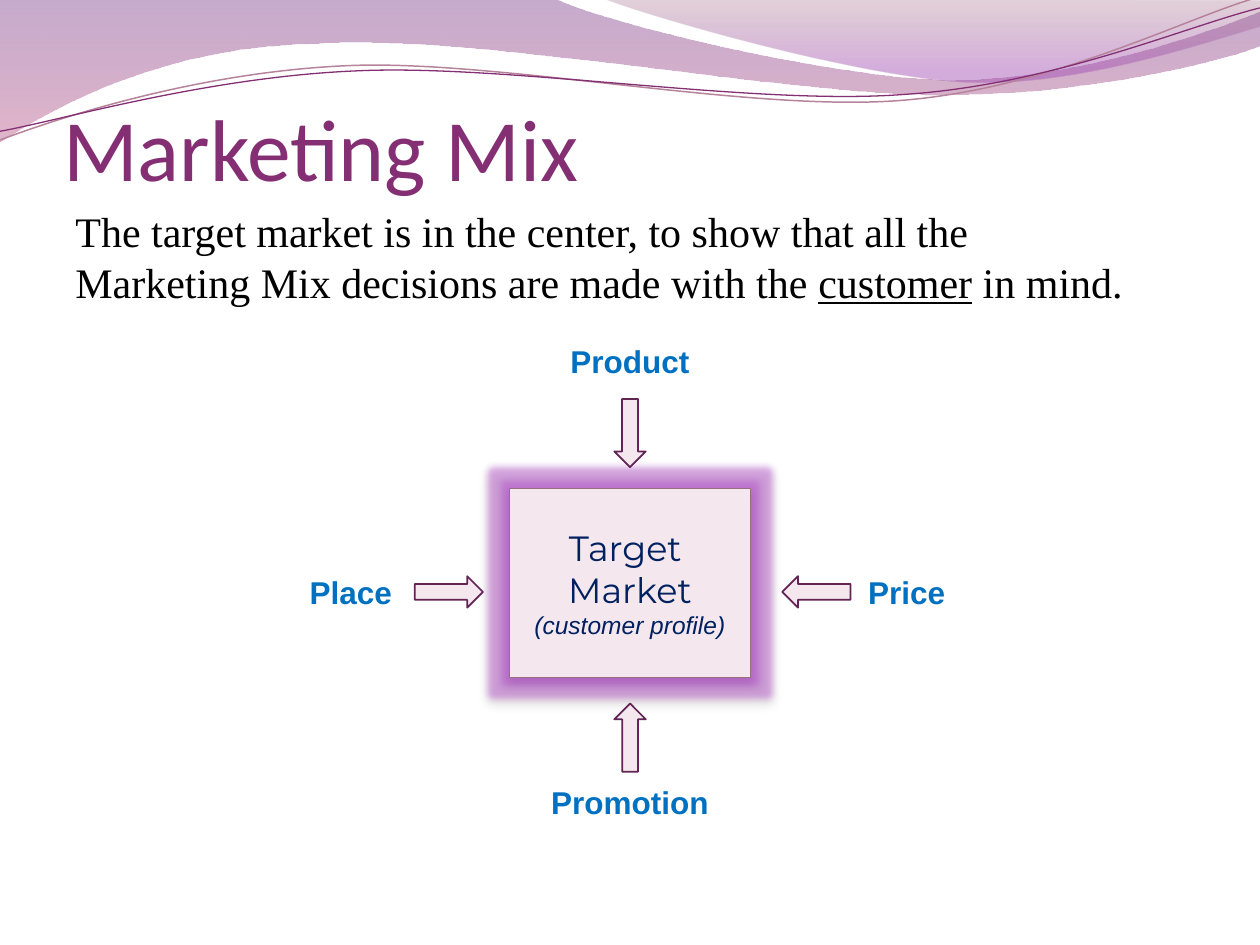
from lxml.etree import SubElement
from pptx import Presentation
from pptx.dml.color import RGBColor
from pptx.enum.shapes import MSO_SHAPE
from pptx.enum.text import MSO_ANCHOR, PP_ALIGN
from pptx.oxml.ns import qn
from pptx.util import Pt

PLUM, BLUSH, NAVY, BLUE = "842F73", "F4E7ED", "002060", "0070C0"

# Each wave: start point, then segments of one point (line) or three (Bézier).
BROAD_WAVE = [(0, 0), [(317, -1)],
              [(343, 12), (478, 45.5), (546, 45.5)],
              [(614, 45.5), (690, 18.5), (720, 6.5)], [(720.5, 26)],
              [(708, 31.5), (626.5, 54.5), (537, 54)],
              [(448, 54), (275, 20), (185, 24.5)],
              [(93, 26), (33, 60), (-1, 81.5)]]
RIGHT_WAVE = [(345, -1),
              [(366.5, 8), (491, 44.5), (553.5, 47)],
              [(616.5, 49.5), (692, 23), (720, 15)], [(720, 0)]]
PALE_LINE = [(0, 80),
             [(34.5, 67), (114, 41), (199.5, 37.5)],
             [(284.5, 34), (427, 64), (513.5, 57.5)],
             [(600, 51), (675.5, 11), (718.5, -1.5)]]
DARK_LINE = [(0, 75),
             [(34, 69), (118, 44), (204, 40.5)],
             [(290, 36.5), (430, 60.5), (516, 54)],
             [(602, 48.5), (677.5, 15), (720, 4.5)]]


def rgb(color):
    return RGBColor.from_string(color)


def format_run(run, font, size, color, bold=False, italic=False):
    run.font.name, run.font.size = font, Pt(size)
    run.font.bold, run.font.italic = bold, italic
    run.font.color.rgb = rgb(color)


def format_shape(shape, fill, line, width):
    shape.shadow.inherit = False
    shape.fill.solid()
    shape.fill.fore_color.rgb = rgb(fill)
    shape.line.color.rgb = rgb(line)
    shape.line.width = Pt(width)


def add_outline(slide, outline, close):
    """Build a freeform through all points, then bend each three-point segment."""
    start, *segments = outline
    builder = slide.shapes.build_freeform(Pt(start[0]), Pt(start[1]))
    builder.add_line_segments([(Pt(x), Pt(y)) for segment in segments
                               for x, y in segment], close=close)
    shape = builder.convert_to_shape()
    shape.shadow.inherit = False
    straight = iter(list(shape.element.iter(qn("a:lnTo"))))
    for segment in segments:
        first, *others = [next(straight) for _ in segment]
        if others:
            first.tag = qn("a:cubicBezTo")
            for other in others:
                first.append(other[0])
                other.getparent().remove(other)
    return shape


def add_wave(slide, outline, stops):
    """Add a wave with a top-to-bottom gradient of (position, color, opacity %)."""
    wave = add_outline(slide, outline, True)
    wave.line.fill.background()
    wave.fill.gradient()
    wave.fill.gradient_angle = 270
    for stop, (position, color, _) in zip(wave.fill.gradient_stops, stops):
        stop.position = position
        stop.color.rgb = rgb(color)
    colors = wave.element.spPr.find(qn("a:gradFill")).iter(qn("a:srgbClr"))
    for node, (_, _, opacity) in zip(colors, stops):
        SubElement(node, qn("a:alpha"), val=str(opacity * 1000))


def add_wave_line(slide, outline, color, width):
    curve = add_outline(slide, outline, False)
    curve.fill.background()
    curve.line.color.rgb = rgb(color)
    curve.line.width = Pt(width)


def add_effect(shape, kind, color, opacity, **settings):
    effects = shape.element.spPr.find(qn("a:effectLst"))
    effect = SubElement(effects, qn(kind), **settings)
    node = SubElement(effect, qn("a:srgbClr"), val=color)
    SubElement(node, qn("a:alpha"), val=str(opacity * 1000))


def set_title(slide):
    title = slide.shapes.title
    title.left, title.top, title.width, title.height = Pt(36), Pt(24), Pt(648), Pt(90)
    frame = title.text_frame
    frame.text = "Marketing Mix"
    frame.vertical_anchor = MSO_ANCHOR.BOTTOM
    frame.margin_left = frame.margin_right = frame.margin_bottom = 0
    frame.margin_top = Pt(3.6)
    frame.paragraphs[0].alignment = PP_ALIGN.LEFT
    format_run(frame.paragraphs[0].runs[0], "Calibri", 50, PLUM)
    title.element.getparent().append(title.element)  # in front of the waves


def add_text_box(slide, left, top, width, height):
    frame = slide.shapes.add_textbox(Pt(left), Pt(top), Pt(width), Pt(height)).text_frame
    frame.word_wrap = True
    return frame


def add_explanation(slide):
    paragraph = add_text_box(slide, 36, 114, 630, 78).paragraphs[0]
    paragraph.space_before = Pt(2.5)
    for text in ("The target market is in the center, to show that all the "
                 "Marketing Mix decisions are made with the ", "customer", " in mind."):
        run = paragraph.add_run()
        run.text = text
        format_run(run, "Times New Roman", 24, "000000")
        run.font.underline = text == "customer"


def add_target_market(slide):
    target = slide.shapes.add_shape(MSO_SHAPE.RECTANGLE, Pt(291), Pt(279), Pt(138), Pt(108))
    format_shape(target, BLUSH, "996E81", 0.75)
    add_effect(target, "a:glow", "B44FCC", 45, rad=str(Pt(8)))
    add_effect(target, "a:outerShdw", "49343D", 48, blurRad=str(Pt(4.5)),
               dist=str(Pt(3)), dir="5400000", rotWithShape="0")
    frame = target.text_frame
    frame.word_wrap = True
    frame.vertical_anchor = MSO_ANCHOR.MIDDLE
    frame.text = "Target \nMarket\v(customer profile)"
    for paragraph in frame.paragraphs:
        paragraph.alignment = PP_ALIGN.CENTER
        for run in paragraph.runs:
            format_run(run, "Montserrat", 20, NAVY)
    format_run(frame.paragraphs[1].runs[1], "Arial", 14, NAVY, italic=True)


def add_label(slide, text, left, top, width, alignment):
    frame = add_text_box(slide, left, top, width, 29)
    frame.text = text
    frame.paragraphs[0].alignment = alignment
    format_run(frame.paragraphs[0].runs[0], "Arial", 18, BLUE, bold=True)


def add_arrow(slide, center_x, center_y, rotation, width=18, length=39):
    arrow = slide.shapes.add_shape(MSO_SHAPE.DOWN_ARROW, Pt(center_x - width / 2),
                                   Pt(center_y - length / 2), Pt(width), Pt(length))
    arrow.rotation = rotation
    format_shape(arrow, BLUSH, "622355", 1)


def main():
    prs = Presentation()
    prs.slide_width, prs.slide_height = Pt(720), Pt(540)
    slide = prs.slides.add_slide(prs.slide_layouts[5])

    add_wave(slide, BROAD_WAVE, [(0, "834591", 45), (1, "C9799E", 55)])
    add_wave(slide, RIGHT_WAVE, [(0, "9F6881", 30), (0.8, "A14BB4", 45)])
    add_wave_line(slide, PALE_LINE, "B6839A", 0.85)
    add_wave_line(slide, DARK_LINE, PLUM, 0.75)

    set_title(slide)
    add_explanation(slide)
    add_target_market(slide)

    for text, left, top, width, alignment, arrow_x, arrow_y, rotation in (
            ("Product", 318, 192, 84, PP_ALIGN.CENTER, 360, 247.5, 0),
            ("Promotion", 304.5, 444, 111, PP_ALIGN.CENTER, 360, 421.5, 180),
            ("Place", 147, 324, 84, PP_ALIGN.RIGHT, 256.5, 338.25, 270),
            ("Price", 489, 324, 84, PP_ALIGN.LEFT, 466.5, 338.25, 90)):
        add_label(slide, text, left, top, width, alignment)
        add_arrow(slide, arrow_x, arrow_y, rotation)

    prs.save("out.pptx")


if __name__ == "__main__":
    main()
